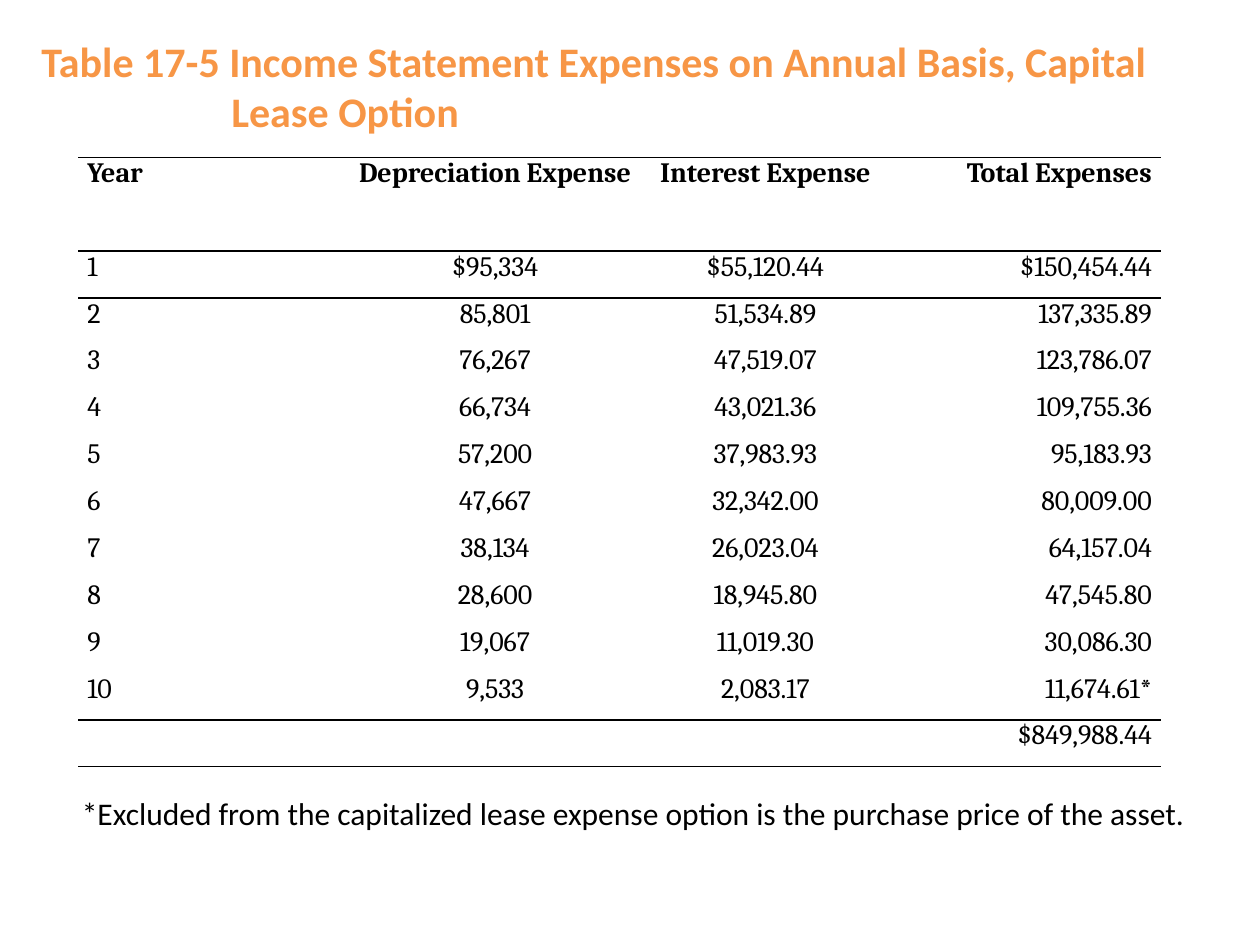
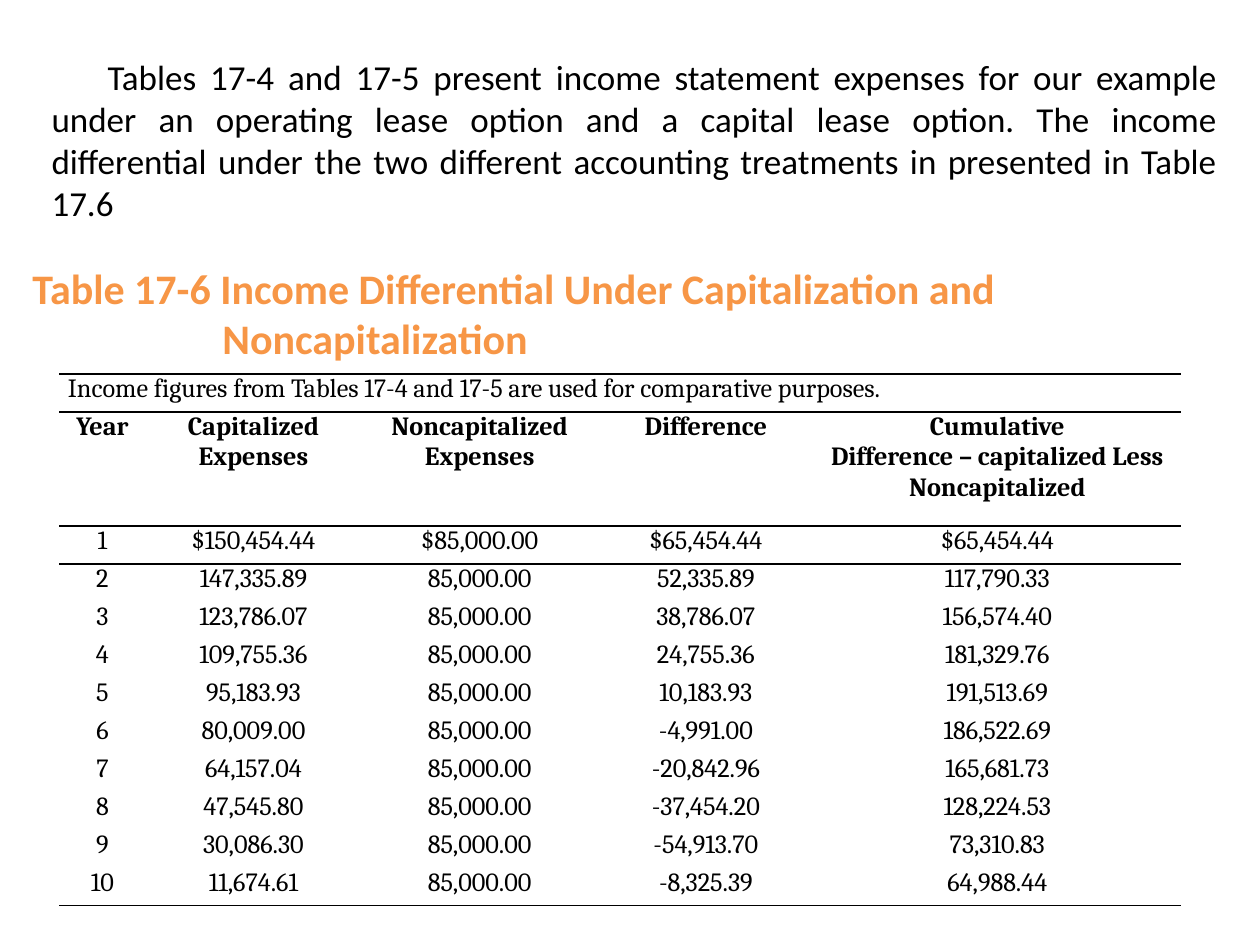
from lxml import etree
from pptx import Presentation
from pptx.dml.color import RGBColor
from pptx.enum import text
from pptx.oxml.ns import qn
from pptx.util import Cm, Pt

ORANGE = RGBColor(0xF7, 0x96, 0x46)
BLACK = RGBColor(0, 0, 0)
BODY_FONT, TABLE_FONT = "Calibri", "Cambria"
NO_GRID_STYLE = "{2D5ABB26-0587-4C30-8999-92F81FD0307C}"
LEFT, CENTER, RIGHT, JUSTIFY = (text.PP_ALIGN.LEFT, text.PP_ALIGN.CENTER,
                                text.PP_ALIGN.RIGHT, text.PP_ALIGN.JUSTIFY)
TITLE_INDENT = Cm(3.83)

# Boxes are left, top, width, height in centimetres.
EXPENSES = dict(
    title=["Table 17-5 Income Statement Expenses on Annual Basis, Capital",
           "Lease Option"],
    title_box=(0.58, 0.58, 24.4, 2.32),
    table_box=(1.58, 3.17, 21.82, 12.29),
    widths=[5.46, 5.88, 5.02, 5.46],
    aligns=[LEFT, CENTER, CENTER, RIGHT],
    size=16, header_row=0, header_units=2, spans=[11], rules=[0, 1, 11, 12],
    rows=[
        ("Year", "Depreciation Expense", "Interest Expense", "Total Expenses"),
        ("1", "$95,334", "$55,120.44", "$150,454.44"),
        ("2", "85,801", "51,534.89", "137,335.89"),
        ("3", "76,267", "47,519.07", "123,786.07"),
        ("4", "66,734", "43,021.36", "109,755.36"),
        ("5", "57,200", "37,983.93", "95,183.93"),
        ("6", "47,667", "32,342.00", "80,009.00"),
        ("7", "38,134", "26,023.04", "64,157.04"),
        ("8", "28,600", "18,945.80", "47,545.80"),
        ("9", "19,067", "11,019.30", "30,086.30"),
        ("10", "9,533", "2,083.17", "11,674.61*"),
        ("$849,988.44",),
    ],
    span_align=RIGHT,
    note="*Excluded from the capitalized lease expense option is the "
         "purchase price of the asset.",
    note_box=(1.4, 15.88, 23.01, 1.02),
    note_format=dict(size=18),
)

DIFFERENTIAL = dict(
    title=["Table 17-6 Income Differential Under Capitalization and",
           "Noncapitalization"],
    title_box=(0.4, 5.16, 23.82, 2.32),
    table_box=(1.19, 7.54, 22.62, 10.72),
    widths=[1.75, 4.34, 4.78, 4.34, 7.41],
    aligns=[CENTER] * 5,
    size=15, header_row=1, header_units=3, spans=[0], rules=[0, 1, 2, 12],
    rows=[
        ("Income figures from Tables 17-4 and 17-5 are used for "
         "comparative purposes.",),
        ("Year", "Capitalized Expenses", "Noncapitalized Expenses", "Difference",
         "Cumulative\nDifference – capitalized Less Noncapitalized"),
        ("1", "$150,454.44", "$85,000.00", "$65,454.44", "$65,454.44"),
        ("2", "147,335.89", "85,000.00", "52,335.89", "117,790.33"),
        ("3", "123,786.07", "85,000.00", "38,786.07", "156,574.40"),
        ("4", "109,755.36", "85,000.00", "24,755.36", "181,329.76"),
        ("5", "95,183.93", "85,000.00", "10,183.93", "191,513.69"),
        ("6", "80,009.00", "85,000.00", "-4,991.00", "186,522.69"),
        ("7", "64,157.04", "85,000.00", "-20,842.96", "165,681.73"),
        ("8", "47,545.80", "85,000.00", "-37,454.20", "128,224.53"),
        ("9", "30,086.30", "85,000.00", "-54,913.70", "73,310.83"),
        ("10", "11,674.61", "85,000.00", "-8,325.39", "64,988.44"),
    ],
    span_align=LEFT,
    note="Tables 17-4 and 17-5 present income statement expenses for our example "
         "under an operating lease option and a capital lease option. The income "
         "differential under the two different accounting treatments in presented "
         "in Table 17.6",
    note_box=(0.79, 0.99, 24, 3.68),
    note_format=dict(size=20, align=JUSTIFY, first_indent=Cm(1.13)),
)


def write(tf, lines, size, font=BODY_FONT, color=BLACK, bold=False, align=LEFT,
          first_indent=0):
    for i, line in enumerate(lines):
        p = tf.paragraphs[0] if i == 0 else tf.add_paragraph()
        p.alignment = align
        if first_indent:
            p._p.get_or_add_pPr().set("indent", str(first_indent))
        r = p.add_run()
        r.text = line
        r.font.name, r.font.size, r.font.bold = font, Pt(size), bold
        r.font.color.rgb = color


def add_title(s, lines, box):
    """Write the title; lines after the first are indented."""
    sp = s.shapes.title
    sp.left, sp.top, sp.width, sp.height = map(Cm, box)
    tf = sp.text_frame
    tf.word_wrap = True
    tf.auto_size = text.MSO_AUTO_SIZE.NONE
    tf.vertical_anchor = text.MSO_ANCHOR.TOP
    write(tf, lines, 24, color=ORANGE, bold=True)
    for p in tf.paragraphs[1:]:
        p._p.get_or_add_pPr().set("marL", str(TITLE_INDENT))


def add_note(s, note, box, note_format):
    tf = s.shapes.add_textbox(*map(Cm, box)).text_frame
    tf.word_wrap = True
    write(tf, [note], **note_format)


def add_border(cell, side):
    ln = etree.SubElement(cell._tc.get_or_add_tcPr(), qn(f"a:{side}"),
                          w=str(Pt(1)))
    fill = etree.SubElement(ln, qn("a:solidFill"))
    etree.SubElement(fill, qn("a:srgbClr"), val=str(BLACK))


def add_ruled_table(s, d):
    """Draw the table with rules only at the row boundaries in d["rules"]."""
    rows, widths = d["rows"], d["widths"]
    box = [Cm(v) for v in d["table_box"]]
    table = s.shapes.add_table(len(rows), len(widths), *box).table
    table.first_row = table.horz_banding = False
    table._tbl.tblPr.find(qn("a:tableStyleId")).text = NO_GRID_STYLE
    for column, width in zip(table.columns, widths):
        column.width = Cm(width)

    unit = box[3] / (len(rows) - 1 + d["header_units"])
    for i, values in enumerate(rows):
        is_header, is_span = i == d["header_row"], i in d["spans"]
        table.rows[i].height = int(unit * (d["header_units"] if is_header else 1))
        for j in range(len(widths)):
            cell = table.cell(i, j)
            cell.margin_left = cell.margin_right = Cm(0.18)
            cell.margin_top = cell.margin_bottom = 0
            for side, boundary in (("lnT", i), ("lnB", i + 1)):
                if boundary in d["rules"]:
                    add_border(cell, side)
            cell.fill.background()
            if j < len(values):
                write(cell.text_frame, values[j].split("\n"), d["size"],
                      font=TABLE_FONT, bold=is_header,
                      align=d["span_align"] if is_span else d["aligns"][j])
        if is_span:
            table.cell(i, 0).merge(table.cell(i, len(widths) - 1))


def main():
    prs = Presentation()
    prs.slide_width, prs.slide_height = Cm(25.4), Cm(19.05)
    for d in (EXPENSES, DIFFERENTIAL):
        s = prs.slides.add_slide(prs.slide_layouts[5])
        add_title(s, d["title"], d["title_box"])
        add_ruled_table(s, d)
        add_note(s, d["note"], d["note_box"], d["note_format"])
    prs.save("out.pptx")


if __name__ == "__main__":
    main()
